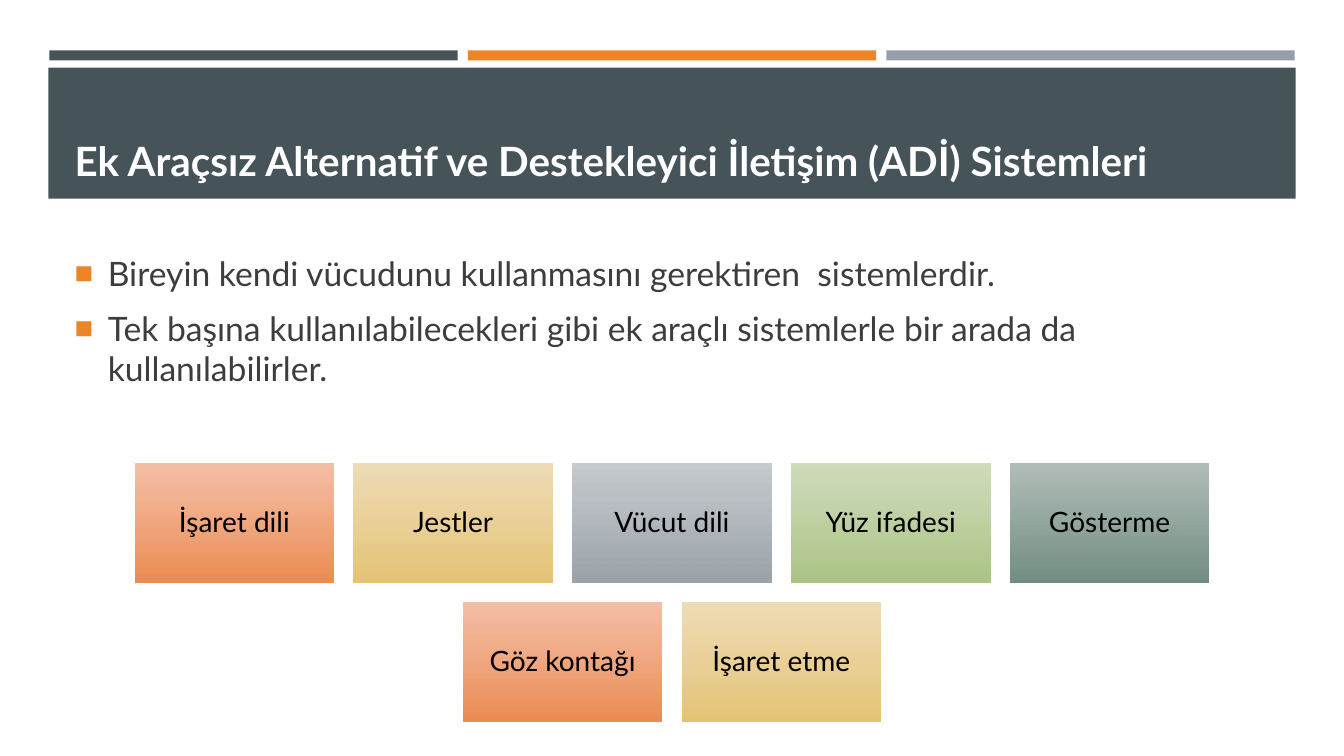
"""Build the slide on unaided alternative and augmentative communication systems."""
from lxml.etree import SubElement
from pptx import Presentation
from pptx.dml.color import RGBColor
from pptx.enum.shapes import MSO_SHAPE
from pptx.enum.text import MSO_ANCHOR, MSO_AUTO_SIZE, PP_ALIGN
from pptx.oxml.ns import qn
from pptx.util import Inches, Pt

TITLE = "Ek Araçsız Alternatif ve Destekleyici İletişim (ADİ) Sistemleri"
BULLETS = [
    "Bireyin kendi vücudunu kullanmasını gerektiren  sistemlerdir.",
    "Tek başına kullanılabilecekleri gibi ek araçlı sistemlerle bir arada da kullanılabilirler.",
]
CARD_ROWS = [
    ["İşaret dili", "Jestler", "Vücut dili", "Yüz ifadesi", "Gösterme"],
    ["Göz kontağı", "İşaret etme"],
]
THEME = {
    "font": "Lato",
    "title": (28.8, "FFFFFF"),
    "body": (24, "3D3D3D"),
    "card": (20, "000000"),
    "band": "465359",
    "bullet": "ED8428",
    "bars": ["465359", "ED8428", "969FA7"],
    "gradients": [("F3B89D", "ED8C53"), ("EED9AE", "E6C476"), ("C0C5C9", "9BA3AB"),
                  ("CAD9B4", "ACC485"), ("A8B6B0", "728E82")],
}
SLIDE_W, SLIDE_H = 13.33, 7.5
BAR_LEFT, BAR_TOP, BAR_W, BAR_H, BAR_GAP = 0.49, 0.5, 4.05, 0.1, 0.1
BAND = (0.48, 0.67, 12.37, 1.3)
TITLE_BOX = (0.64, 0.77, 12.06, 1.11)
BODY_BOX = (0.64, 2.27, 12.06, 1.82)
CARD_W, CARD_H, CARD_GAP, CARD_TOP = 1.97, 1.18, 0.2, 4.6


def apply(obj, values):
    for name, value in values.items():
        setattr(obj, name, value)


def place(sp, box):
    apply(sp, dict(zip(("left", "top", "width", "height"), map(Inches, box))))


def add_rect(slide, box, color=None):
    sp = slide.shapes.add_shape(MSO_SHAPE.RECTANGLE, *map(Inches, box))
    sp.shadow.inherit = False
    sp.line.fill.background()
    if color:
        sp.fill.solid()
        sp.fill.fore_color.rgb = RGBColor.from_string(color)
    return sp


def write(tf, lines, style, anchor, bold=False, **spacing):
    size, color = THEME[style]
    apply(tf, {"word_wrap": True, "auto_size": MSO_AUTO_SIZE.NONE, "vertical_anchor": anchor})
    for i, line in enumerate(lines):
        p = tf.add_paragraph() if i else tf.paragraphs[0]
        apply(p, spacing)
        r = p.add_run()
        r.text = line
        apply(r.font, {"name": THEME["font"], "size": Pt(size), "bold": bold})
        r.font.color.rgb = RGBColor.from_string(color)


def add_bullet(p):
    pPr = p._p.get_or_add_pPr()
    apply_indent = {"marL": Inches(0.33), "indent": -Inches(0.33)}
    for name, value in apply_indent.items():
        pPr.set(name, str(value))
    SubElement(SubElement(pPr, qn("a:buClr")), qn("a:srgbClr"), val=THEME["bullet"])
    SubElement(pPr, qn("a:buSzPct"), val="92000")
    SubElement(pPr, qn("a:buChar"), char="■")


def add_card(slide, box, text, colors):
    sp = add_rect(slide, box)
    sp.fill.gradient()
    sp.fill.gradient_angle = 270
    for stop, color in zip(sp.fill.gradient_stops, colors):
        stop.color.rgb = RGBColor.from_string(color)
    first = next(sp._element.iter(qn("a:srgbClr")))
    SubElement(first, qn("a:alpha"), val="90000")
    tf = sp.text_frame
    apply(tf, {f"margin_{side}": Inches(0.08) for side in ("left", "top", "right", "bottom")})
    write(tf, [text], "card", MSO_ANCHOR.MIDDLE, alignment=PP_ALIGN.CENTER, line_spacing=0.9)


def main():
    prs = Presentation()
    apply(prs, {"slide_width": Inches(SLIDE_W), "slide_height": Inches(SLIDE_H)})
    slide = prs.slides.add_slide(prs.slide_layouts[1])
    title, body = slide.placeholders

    for i, color in enumerate(THEME["bars"]):
        add_rect(slide, (BAR_LEFT + i * (BAR_W + BAR_GAP), BAR_TOP, BAR_W, BAR_H), color)
    add_rect(slide, BAND, THEME["band"])

    for sp, box in ((title, TITLE_BOX), (body, BODY_BOX)):
        place(sp, box)
        slide.shapes._spTree.append(sp._element)
    write(title.text_frame, [TITLE], "title", MSO_ANCHOR.BOTTOM, bold=True,
          alignment=PP_ALIGN.LEFT)
    write(body.text_frame, BULLETS, "body", MSO_ANCHOR.MIDDLE,
          space_before=Pt(4.8), space_after=Pt(6))
    for p in body.text_frame.paragraphs:
        add_bullet(p)

    for row, labels in enumerate(CARD_ROWS):
        left = (SLIDE_W - len(labels) * (CARD_W + CARD_GAP) + CARD_GAP) / 2
        top = CARD_TOP + row * (CARD_H + CARD_GAP)
        for col, (label, colors) in enumerate(zip(labels, THEME["gradients"])):
            add_card(slide, (left + col * (CARD_W + CARD_GAP), top, CARD_W, CARD_H), label, colors)

    prs.save("out.pptx")


if __name__ == "__main__":
    main()
